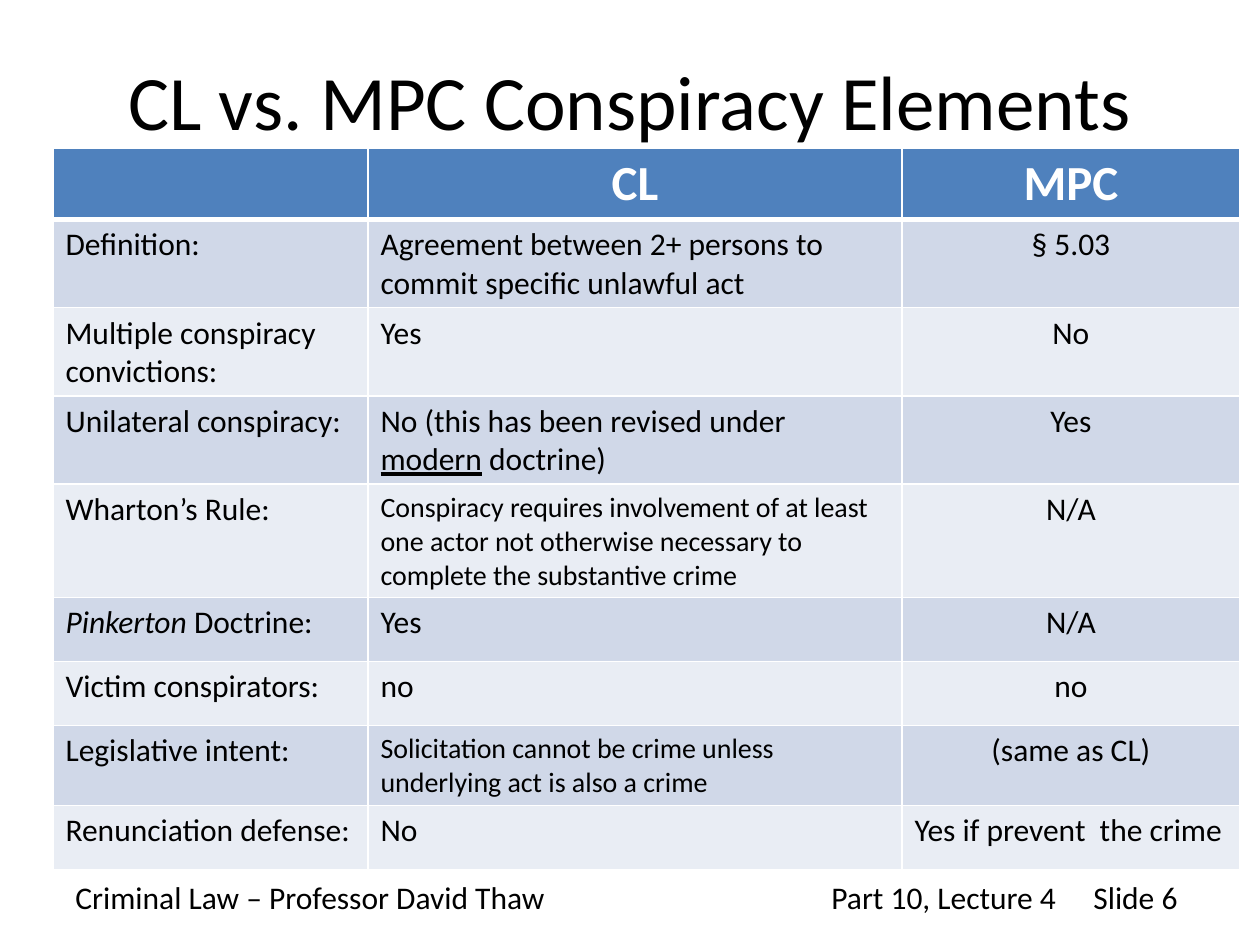
from lxml import etree
from pptx import Presentation
from pptx import util as u
from pptx.dml.color import RGBColor
from pptx.enum import text
from pptx.oxml.ns import qn

FONT = "Calibri"
BLACK = RGBColor(0x00, 0x00, 0x00)
WHITE = RGBColor(0xFF, 0xFF, 0xFF)
HEADER_BLUE = RGBColor(0x4F, 0x81, 0xBD)
BANDS = (RGBColor(0xD0, 0xD8, 0xE8), RGBColor(0xE9, 0xED, 0xF4))
LEFT, CENTER = text.PP_ALIGN.LEFT, text.PP_ALIGN.CENTER

COLUMN_WIDTHS = (315, 534, 338)
ROW_HEIGHTS = (68, 83, 83, 83, 107, 64, 64, 64, 64)
HEADINGS = ("", "CL", "MPC")
ELEMENTS = (
    ("Definition:", "Agreement between 2+ persons to commit specific unlawful act", "§ 5.03"),
    ("Multiple conspiracy convictions:", "Yes", "No"),
    ("Unilateral conspiracy:", "No (this has been revised under modern doctrine)", "Yes"),
    ("Wharton’s Rule:", "Conspiracy requires involvement of at least one actor not "
     "otherwise necessary to complete the substantive crime", "N/A"),
    ("Pinkerton Doctrine:", "Yes", "N/A"),
    ("Victim conspirators:", "no", "no"),
    ("Legislative intent:", "Solicitation cannot be crime unless underlying act is also a crime",
     "(same as CL)"),
    ("Renunciation defense:", "No", "Yes if prevent  the crime"),
)
EMPHASIS = {"modern": "underline", "Pinkerton": "italic"}
LONG_RULES = ("Conspiracy requires", "Solicitation cannot")
FOOTERS = (
    ("Criminal Law – Professor David Thaw", 63, 500),
    ("Slide 6", 1081, 111),
    ("Part 10, Lecture 4", 819, 253),
)


def px(length):
    return u.Emu(round(length * u.Inches(1) / 126))


def place(shape, left, top, width, height):
    shape.left, shape.top = px(left), px(top)
    shape.width, shape.height = px(width), px(height)


def format_text(paragraph, size, color=BLACK, bold=False, align=LEFT):
    paragraph.alignment = align
    for run in paragraph.runs:
        run.font.name = FONT
        run.font.size = u.Pt(size)
        run.font.bold = bold
        run.font.color.rgb = color


def write_emphasized(paragraph, wording):
    for word, style in EMPHASIS.items():
        before, found, after = wording.partition(word)
        if found:
            for part in filter(None, (before, found, after)):
                run = paragraph.add_run()
                run.text = part
                if part == word:
                    setattr(run.font, style, True)
            return
    paragraph.text = wording


def add_title(slide, wording):
    title = slide.shapes.title
    place(title, 63, 21, 1134, 158)
    title.text_frame.text = wording
    title.text_frame.vertical_anchor = text.MSO_ANCHOR.MIDDLE
    format_text(title.text_frame.paragraphs[0], 44, align=CENTER)


def add_footer(slide, wording, left, width):
    footer = slide.shapes.add_textbox(px(left), px(872), px(width), px(50))
    footer.text_frame.word_wrap = False
    footer.text_frame.auto_size = text.MSO_AUTO_SIZE.SHAPE_TO_FIT_TEXT
    footer.text_frame.text = wording
    format_text(footer.text_frame.paragraphs[0], 18)


def set_borders(cell, top, bottom):
    properties = cell._tc.get_or_add_tcPr()
    widths = {"a:lnL": 1, "a:lnR": 1, "a:lnT": top, "a:lnB": bottom}
    for index, (tag, width) in enumerate(widths.items()):
        line = etree.Element(qn(tag), w=str(u.Pt(width)))
        fill = etree.SubElement(line, qn("a:solidFill"))
        etree.SubElement(fill, qn("a:srgbClr"), val=str(WHITE))
        properties.insert(index, line)


def fill_cell(cell, wording, color, top, bottom):
    cell.fill.solid()
    cell.fill.fore_color.rgb = color
    set_borders(cell, top, bottom)
    write_emphasized(cell.text_frame.paragraphs[0], wording)


def add_comparison(slide):
    frame = slide.shapes.add_table(
        len(ROW_HEIGHTS), len(COLUMN_WIDTHS), px(53), px(148),
        px(sum(COLUMN_WIDTHS)), px(sum(ROW_HEIGHTS)))
    table = frame.table
    for column, width in zip(table.columns, COLUMN_WIDTHS):
        column.width = px(width)
    for row, height in zip(table.rows, ROW_HEIGHTS):
        row.height = px(height)

    for column, heading in enumerate(HEADINGS):
        cell = table.cell(0, column)
        fill_cell(cell, heading, HEADER_BLUE, 1, 3)
        format_text(cell.text_frame.paragraphs[0], 28, WHITE, True, CENTER)

    for row, element in enumerate(ELEMENTS, 1):
        for column, wording in enumerate(element):
            cell = table.cell(row, column)
            fill_cell(cell, wording, BANDS[(row - 1) % 2], 3 if row == 1 else 1, 1)
            size = 16 if wording.startswith(LONG_RULES) else 18
            centered = column == 2 and row < len(ELEMENTS)
            format_text(cell.text_frame.paragraphs[0], size,
                        align=CENTER if centered else LEFT)


def main():
    deck = Presentation()
    deck.slide_width, deck.slide_height = px(1260), px(945)
    slide = deck.slides.add_slide(deck.slide_layouts[5])
    for footer in FOOTERS:
        add_footer(slide, *footer)
    add_title(slide, "CL vs. MPC Conspiracy Elements")
    add_comparison(slide)
    deck.save("out.pptx")


if __name__ == "__main__":
    main()
